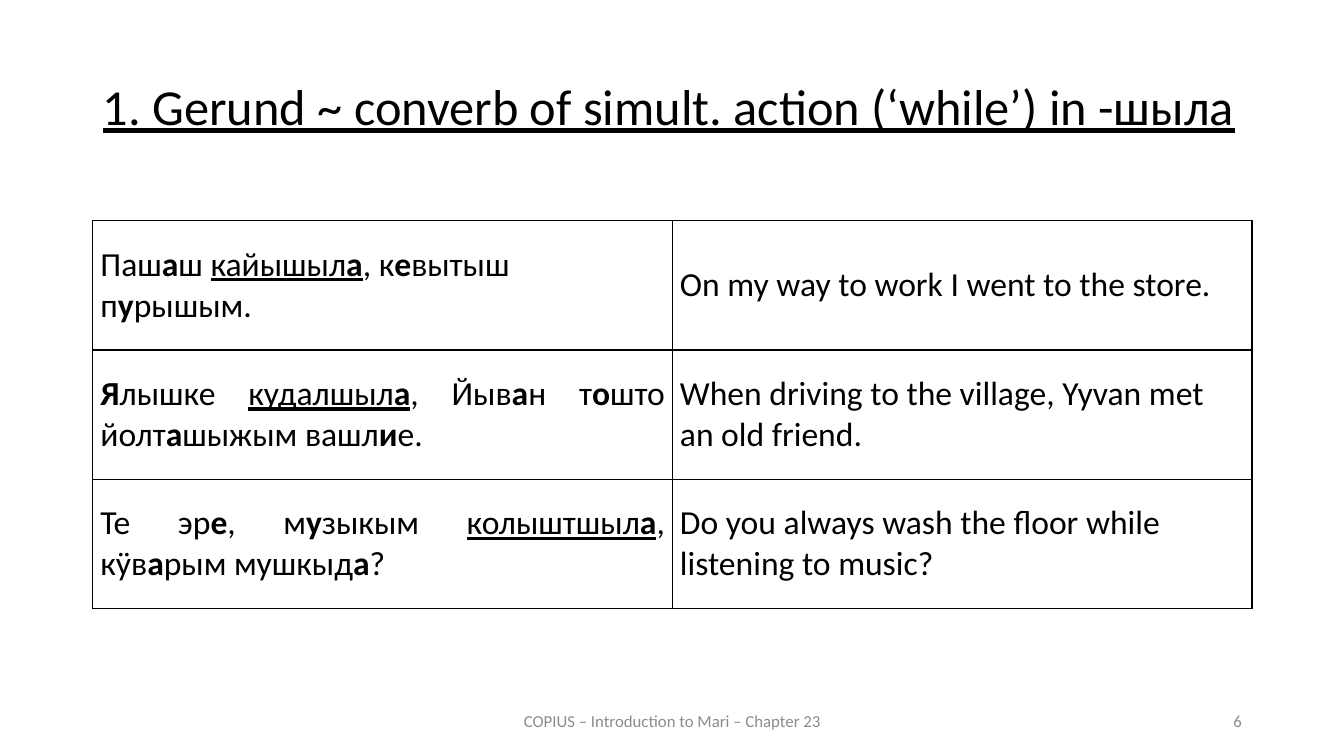
from lxml import etree
from pptx import Presentation
from pptx.dml.color import RGBColor
from pptx.enum.text import MSO_ANCHOR, MSO_AUTO_SIZE, PP_ALIGN
from pptx.oxml.ns import qn
from pptx.util import Cm, Pt

TOP, MIDDLE = MSO_ANCHOR.TOP, MSO_ANCHOR.MIDDLE
FIXED = MSO_AUTO_SIZE.NONE
LEFT, CENTER, RIGHT, JUSTIFY = PP_ALIGN.LEFT, PP_ALIGN.CENTER, PP_ALIGN.RIGHT, PP_ALIGN.JUSTIFY

COLORS = {"ink": "000000", "muted": "8C8C8C"}
FORMATS = {
    "title": {"name": "Calibri", "size": Pt(36), "underline": True},
    "cell": {"name": "Calibri", "size": Pt(24)},
    "foot": {"name": "Calibri", "size": Pt(12)},
}
MARGIN, WIDTH = 2.34, 29.21
FOOT_TOP, FOOT_HIGH = 17.65, 1.01
ROWS = [
    ("Паш*а*ш _кайышыл*а*_, к*е*вытыш п*у*рышым.", LEFT,
     "On my way to work I went to the store."),
    ("*Я*лышке _кудалшыл*а*_, Йыв*а*н т*о*што йолт*а*шыжым вашл*и*е.", JUSTIFY,
     "When driving to the village, Yyvan met an old friend."),
    ("Те эр*е*, м*у*зыкым _колыштшыл*а*_, кӱв*а*рым мушкыд*а*?", JUSTIFY,
     "Do you always wash the floor while listening to music?"),
]


def assign(target, values):
    """Set each named value on the target."""
    for name, value in values.items():
        setattr(target, name, value)


class Lesson:
    """Hold the style and the current slide."""

    def __init__(self, deck):
        """Add a slide with a title to the deck."""
        self.slide = deck.slides.add_slide(deck.slide_layouts[5])
        self.formats = FORMATS
        self.colors = COLORS

    def phrase(self, para, text, style, color, align):
        """Fill a paragraph with text where * marks bold and _ marks underline."""
        para.alignment = align
        for line, chunk in enumerate(text.split("_")):
            for bold, part in enumerate(chunk.split("*")):
                if part:
                    run = para.add_run()
                    run.text = part
                    marks = {"bold": bold % 2 == 1, "underline": line % 2 == 1}
                    assign(run.font, marks | self.formats[style])
                    run.font.color.rgb = RGBColor.from_string(self.colors[color])

    def title(self, text, left, top, width, height):
        """Place and fill the title."""
        shape = self.slide.shapes.title
        assign(shape, {"left": Cm(left), "top": Cm(top),
                       "width": Cm(width), "height": Cm(height)})
        assign(shape.text_frame, {"vertical_anchor": TOP, "word_wrap": True,
                                  "auto_size": FIXED})
        para = shape.text_frame.paragraphs[0]
        assign(para, {"line_spacing": 0.9, "space_before": Pt(12)})
        self.phrase(para, text, "title", "ink", JUSTIFY)

    def label(self, text, left, width, align):
        """Add a line of text at the foot."""
        box = self.slide.shapes.add_textbox(Cm(left), Cm(FOOT_TOP), Cm(width), Cm(FOOT_HIGH))
        assign(box.text_frame, {"vertical_anchor": MIDDLE, "word_wrap": True})
        self.phrase(box.text_frame.paragraphs[0], text, "foot", "muted", align)

    def border(self, cell):
        """Draw a thin line on all sides of a cell."""
        props = cell._tc.get_or_add_tcPr()
        for side in ("lnL", "lnR", "lnT", "lnB"):
            line = etree.SubElement(props, qn(f"a:{side}"), w=str(Pt(1)))
            fill = etree.SubElement(line, qn("a:solidFill"))
            etree.SubElement(fill, qn("a:srgbClr"), val=self.colors["ink"])

    def table(self, rows, left, top, width, height):
        """Add a table of phrases and their meanings."""
        frame = self.slide.shapes.add_table(len(rows), 2, Cm(left), Cm(top), Cm(width), Cm(height))
        grid = frame.table
        assign(grid, {"first_row": False, "horz_banding": False})
        for row, (mari, align, meaning) in enumerate(rows):
            for col, (text, side) in enumerate([(mari, align), (meaning, LEFT)]):
                cell = grid.cell(row, col)
                assign(cell, {"vertical_anchor": MIDDLE, "margin_left": Cm(0.19),
                              "margin_right": Cm(0.19), "margin_top": 0, "margin_bottom": 0})
                self.border(cell)
                cell.fill.background()
                self.phrase(cell.text_frame.paragraphs[0], text, "cell", "ink", side)


def main():
    """Build and save the slide."""
    deck = Presentation()
    assign(deck, {"slide_width": Cm(33.87), "slide_height": Cm(19.05)})
    page = Lesson(deck)
    page.title("1. Gerund ~ converb of simult. action (‘while’) in -шыла", MARGIN, 1.93, WIDTH, 2.11)
    page.label("COPIUS – Introduction to Mari – Chapter 23", 11.23, 11.43, CENTER)
    page.label("6", 23.93, 7.62, RIGHT)
    page.table(ROWS, MARGIN, 5.56, WIDTH, 9.78)
    deck.save("out.pptx")


if __name__ == "__main__":
    main()
